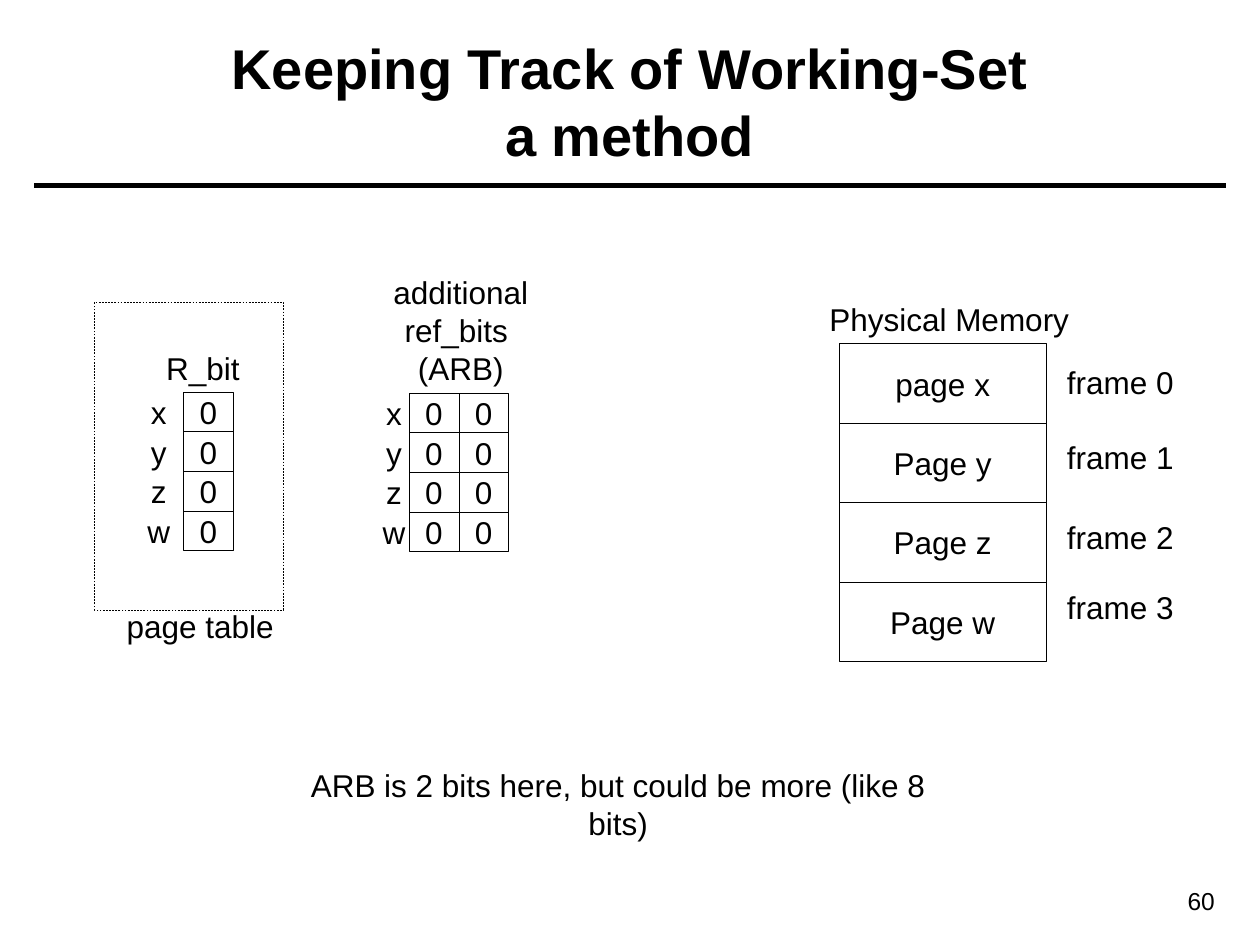
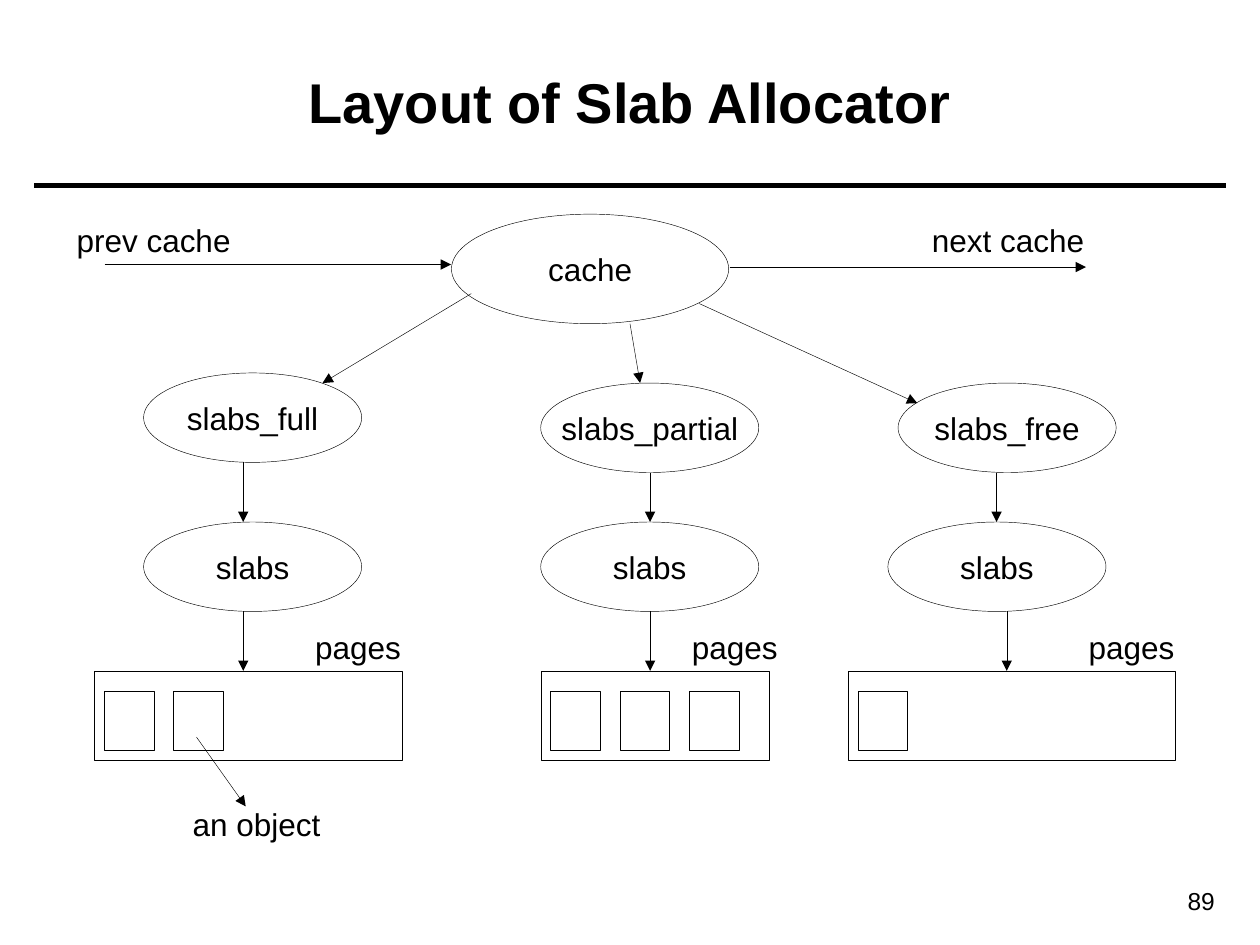
from lxml.etree import SubElement
from pptx import Presentation
from pptx.dml.color import RGBColor
from pptx.enum.dml import MSO_LINE
from pptx.enum.shapes import MSO_CONNECTOR, MSO_SHAPE
from pptx.enum.text import MSO_ANCHOR as Anchor, MSO_AUTO_SIZE as AutoSize, PP_ALIGN as Align
from pptx.oxml.ns import qn
from pptx.util import Pt

INK = "000000"
FONT = "Arial"
HAIRLINE = 0.25
RECT, OVAL = MSO_SHAPE.RECTANGLE, MSO_SHAPE.OVAL


def write(shape, text, size=18, bold=False, align=Align.CENTER,
          anchor=Anchor.MIDDLE, wrap=False, grow=False, color=INK):
    """Fill a shape with text; \\n parts paragraphs, \\v parts lines."""
    frame = shape.text_frame
    frame.text = text
    frame.word_wrap = wrap
    frame.vertical_anchor = anchor
    if grow:
        frame.auto_size = AutoSize.SHAPE_TO_FIT_TEXT
    for para in frame.paragraphs:
        para.alignment = align
        for span in para.runs:
            span.font.name = FONT
            span.font.size = Pt(size)
            span.font.bold = bold
            span.font.color.rgb = RGBColor.from_string(color)
        for line_break in para._p.findall(qn("a:br")):
            SubElement(line_break, qn("a:rPr"), sz=str(size * 100))


def draw(page, kind, left, top, width, height, text=None, **style):
    """Add an outlined shape, or a plain text box when kind is None."""
    bounds = Pt(left), Pt(top), Pt(width), Pt(height)
    if kind is None:
        shape = page.shapes.add_textbox(*bounds)
    else:
        shape = page.shapes.add_shape(kind, *bounds)
        shape.shadow.inherit = False
        shape.fill.background()
        shape.line.color.rgb = RGBColor.from_string(INK)
        shape.line.width = Pt(HAIRLINE)
    if text:
        write(shape, text, **style)
    return shape


deck = Presentation()
deck.slide_width, deck.slide_height = Pt(720), Pt(540)

# Shared frame: title, page number and the rule below the title
pages = []
lines = []  # page, start x, start y, end x, end y, width, has arrowhead
for title, number in (("Keeping Track of Working-Set\va method", "60"),
                      ("Layout of Slab Allocator", "89")):
    page = deck.slides.add_slide(deck.slide_layouts[5])
    heading = page.shapes.title
    heading.left, heading.top = Pt(25.4), Pt(12.5)
    heading.width, heading.height = Pt(669), Pt(90)
    write(heading, title, size=32, bold=True, wrap=True)
    draw(page, None, 626.4, 502.6, 74.9, 24.5, number, size=14,
         align=Align.RIGHT, anchor=Anchor.TOP, wrap=True)
    lines.append((page, 19.5, 105.8, 700.5, 105.8, 3, False))
    pages.append(page)
working_set, slab_layout = pages

# Captions keep to one line and grow with their text
LABEL_HEIGHT = 28.8
CAPTION = dict(anchor=Anchor.TOP, grow=True)

# Working set: physical memory frames
MEMORY_TOP, FRAME_HEIGHT = 196.4, 45.4
memory = (("page x", 203.8), ("Page y", 247), ("Page z", 292.3), ("Page w", 332.6))
for index, (content, label_top) in enumerate(memory):
    draw(working_set, RECT, 479.3, MEMORY_TOP + index * FRAME_HEIGHT,
         118.8, FRAME_HEIGHT, content)
    draw(working_set, None, 602.4, label_top, 75.6, LABEL_HEIGHT,
         f"frame {index}", **CAPTION)

# Working set: reference bits, one row for each page
BIT_WIDTH, BIT_HEIGHT = 28.4, 22.7
bit_tables = ((76.5, 104.9, 223.9, 1), (211, 233.8, 224.5, 2))
for label_left, bits_left, table_top, bit_count in bit_tables:
    for row, name in enumerate("xyzw"):
        row_top = table_top + row * BIT_HEIGHT
        draw(working_set, None, label_left, row_top, BIT_WIDTH, BIT_HEIGHT, name)
        for column in range(bit_count):
            draw(working_set, RECT, bits_left + column * BIT_WIDTH, row_top,
                 BIT_WIDTH, BIT_HEIGHT, "0")

page_table = draw(working_set, RECT, 54, 172.8, 108, 175.7)
page_table.line.dash_style = MSO_LINE.DASH

captions = (
    ("Physical Memory", 464.8, 167.8, 155.2, LABEL_HEIGHT),
    ("R_bit", 87.8, 195.8, 56.2, LABEL_HEIGHT),
    ("page table", 62.4, 343.4, 104, LABEL_HEIGHT),
    ("additional\nref_bits \v(ARB)", 215.6, 152.6, 95.4, 72),
)
for text, *bounds in captions:
    draw(working_set, None, *bounds, text, **CAPTION)
draw(working_set, None, 151.2, 434.4, 404, LABEL_HEIGHT,
     "ARB is 2 bits here, but could be more (like 8 bits)",
     anchor=Anchor.TOP, wrap=True)

# Slab allocator: the cache and its three chains of slabs
NODE_WIDTH, NODE_HEIGHT = 124.6, 51.1
SLABS_TOP, PAGES_TOP = 298.3, 383.4
OBJECT_WIDTH, OBJECT_HEIGHT, OBJECT_STEP = 28.4, 34, 39.6
draw(slab_layout, OVAL, 258, 122.4, 158.4, 62.6, "cache")

# name, left, top, slabs left, arrow x above and below slabs,
# pages left and width, pages label left, objects
chains = (
    ("slabs_full", 82.1, 213.1, 82.1, 139, 139, 54, 175.7, 172.8, 2),
    ("slabs_partial", 309, 218.9, 309, 371.5, 371.5, 309, 130.3, 388.1, 3),
    ("slabs_free", 513.2, 218.9, 507.4, 569.5, 575.3, 484.6, 187.2, 614.9, 1),
)
for (name, left, top, slabs_left, upper_x, lower_x,
     pages_left, pages_width, label_left, object_count) in chains:
    draw(slab_layout, OVAL, left, top, NODE_WIDTH, NODE_HEIGHT, name)
    draw(slab_layout, OVAL, slabs_left, SLABS_TOP, NODE_WIDTH, NODE_HEIGHT, "slabs")
    draw(slab_layout, RECT, pages_left, PAGES_TOP, pages_width, NODE_HEIGHT)
    draw(slab_layout, None, label_left, 355.2, 63.4, LABEL_HEIGHT, "pages", **CAPTION)
    for index in range(object_count):
        draw(slab_layout, RECT, pages_left + 5.6 + index * OBJECT_STEP, PAGES_TOP + 11.5,
             OBJECT_WIDTH, OBJECT_HEIGHT)
    for x, start, end in ((upper_x, top + NODE_HEIGHT, SLABS_TOP),
                          (lower_x, SLABS_TOP + NODE_HEIGHT, PAGES_TOP)):
        lines.append((slab_layout, x, start, x, end, HAIRLINE, True))

for text, left, top, width in (("prev cache", 33.8, 122.6, 108),
                               ("next cache", 522, 122.6, 108),
                               ("an object", 99.6, 456.7, 94)):
    draw(slab_layout, None, left, top, width, LABEL_HEIGHT, text, **CAPTION)

cache_links = (
    (59.8, 151.2, 257.8, 151.2),     # from the previous cache
    (416.9, 152.6, 620.6, 152.6),    # to the next cache
    (269.3, 167.8, 184.3, 218.9),    # to slabs_full
    (360, 185, 365.8, 218.9),        # to slabs_partial
    (399.6, 173.5, 524.2, 230.4),    # to slabs_free
    (112.3, 421.2, 140.4, 460.8),    # to the object caption
)
for ends in cache_links:
    lines.append((slab_layout, *ends, HAIRLINE, True))

# All rules and arrows
for page, start_x, start_y, end_x, end_y, width, has_head in lines:
    line = page.shapes.add_connector(MSO_CONNECTOR.STRAIGHT, Pt(start_x), Pt(start_y),
                                     Pt(end_x), Pt(end_y))
    line.line.color.rgb = RGBColor.from_string(INK)
    line.line.width = Pt(width)
    if has_head:
        SubElement(line.line._get_or_add_ln(), qn("a:tailEnd"), type="triangle")
    SubElement(line.element.spPr, qn("a:effectLst"))

deck.save("out.pptx")
